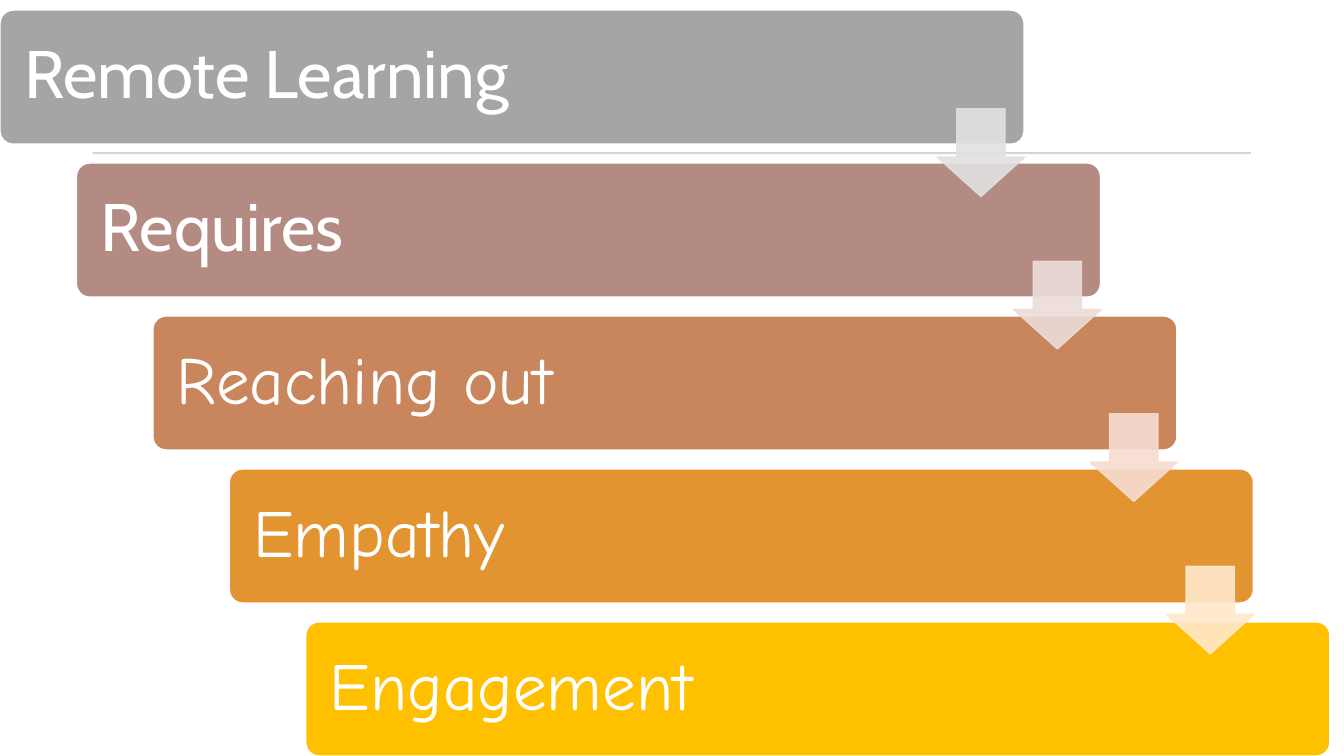
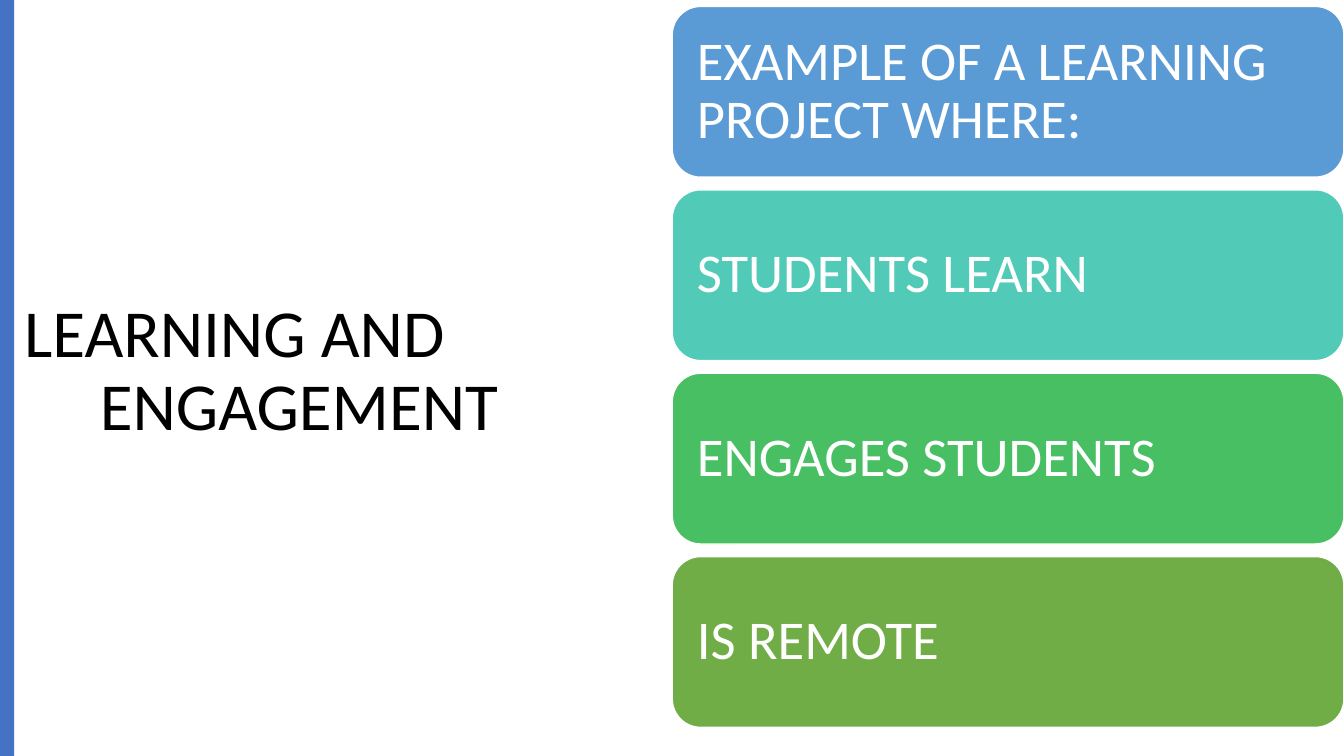
"""Build two slides on remote learning: a staircase of steps and a list of cards."""
from lxml import etree
from pptx import Presentation
from pptx.dml.color import RGBColor
from pptx.enum import shapes, text
from pptx.oxml import ns
from pptx.util import Pt

WHITE, BLACK, RULE, ACCENT = "FFFFFF", "000000", "D5D5D5", "4472C4"
SHAPE = shapes.MSO_SHAPE


def paint(fill, color, opacity=100):
    fill.solid()
    fill.fore_color.rgb = RGBColor.from_string(color)
    if opacity < 100:
        for element in fill._xPr.iter(ns.qn("a:srgbClr")):
            etree.SubElement(element, ns.qn("a:alpha"), val=str(opacity * 1000))


def add_block(slide, kind, box, color, line=None, opacity=100, label="",
              font="Calibri", size=39, inset=0, adjustments=()):
    shape = slide.shapes.add_shape(kind, *map(Pt, box))
    shape.shadow.inherit = False
    for index, value in enumerate(adjustments):
        shape.adjustments[index] = value
    paint(shape.fill, color, opacity)
    if line:
        paint(shape.line.fill, line, opacity)
        shape.line.width = Pt(1)
    else:
        shape.line.fill.background()
    if label:
        frame = shape.text_frame
        frame.text = label
        frame.word_wrap = True
        frame.vertical_anchor = text.MSO_ANCHOR.MIDDLE
        frame.margin_left = frame.margin_right = Pt(inset)
        frame.margin_top = frame.margin_bottom = Pt(inset)
        paragraph = frame.paragraphs[0]
        paragraph.alignment = text.PP_ALIGN.LEFT
        paragraph.line_spacing = 0.9
        paragraph.font.name = font
        paragraph.font.size = Pt(size)
        paint(paragraph.font.fill, WHITE)


presentation = Presentation()
presentation.slide_width = Pt(960)
presentation.slide_height = Pt(540)
title_only, blank = presentation.slide_layouts[5], presentation.slide_layouts[6]

slide = presentation.slides.add_slide(blank)
add_block(slide, SHAPE.RECTANGLE, (66.2, 108.7, 827.3, 1.4), RULE)
steps = [
    ("Remote Learning", "Cabin", "A5A5A5"),
    ("Requires", "Cabin", "B48B83"),
    ("Reaching out", "Comic Neue", "C9865C"),
    ("Empathy", "Comic Neue", "E19430"),
    ("Engagement", "Comic Neue", "FFC000"),
]
step_right = 54.6
for index, (label, font, color) in enumerate(steps):
    box = (step_right * index, 7.2 + 109.25 * index, 731.5, 95.8)
    add_block(slide, SHAPE.ROUNDED_RECTANGLE, box, color, line=WHITE, label=label,
              font=font, size=48, inset=14.4, adjustments=[0.1])
for index, color in enumerate(["E1E1E1", "ECDCD9", "F6DDD1", "FFE8CB"]):
    box = (669.4 + step_right * index, 77.8 + 108.9 * index, 62.6, 62.6)
    add_block(slide, SHAPE.DOWN_ARROW, box, color, line=color, opacity=90,
              adjustments=[0.55, 0.45])

slide = presentation.slides.add_slide(title_only)
title = slide.shapes.title
title.left, title.top, title.width, title.height = map(Pt, (10.1, 49, 439.2, 433.4))
frame = title.text_frame
frame.text = "LEARNING AND\nENGAGEMENT"
frame.word_wrap = True
frame.auto_size = text.MSO_AUTO_SIZE.NONE
frame.vertical_anchor = text.MSO_ANCHOR.MIDDLE
for paragraph, indent in zip(frame.paragraphs, (0, 54)):
    paragraph.alignment = text.PP_ALIGN.LEFT
    paragraph.line_spacing = 0.9
    paragraph._p.get_or_add_pPr().set("marL", str(Pt(indent)))
    paragraph.font.name = "Calibri"
    paragraph.font.size = Pt(48)
    paint(paragraph.font.fill, BLACK)

add_block(slide, SHAPE.RECTANGLE, (0, 0, 10.1, 540), ACCENT)
cards = [
    ("EXAMPLE OF A LEARNING PROJECT WHERE:", "5B9BD5"),
    ("STUDENTS LEARN", "52CAB8"),
    ("ENGAGES STUDENTS", "49BF64"),
    ("IS REMOTE", "70AD47"),
]
for index, (label, color) in enumerate(cards):
    box = (480.2, 4.6 + 131 * index, 479.8, 122)
    add_block(slide, SHAPE.ROUNDED_RECTANGLE, box, color, line=WHITE, label=label, inset=11.7)

presentation.save("out.pptx")
